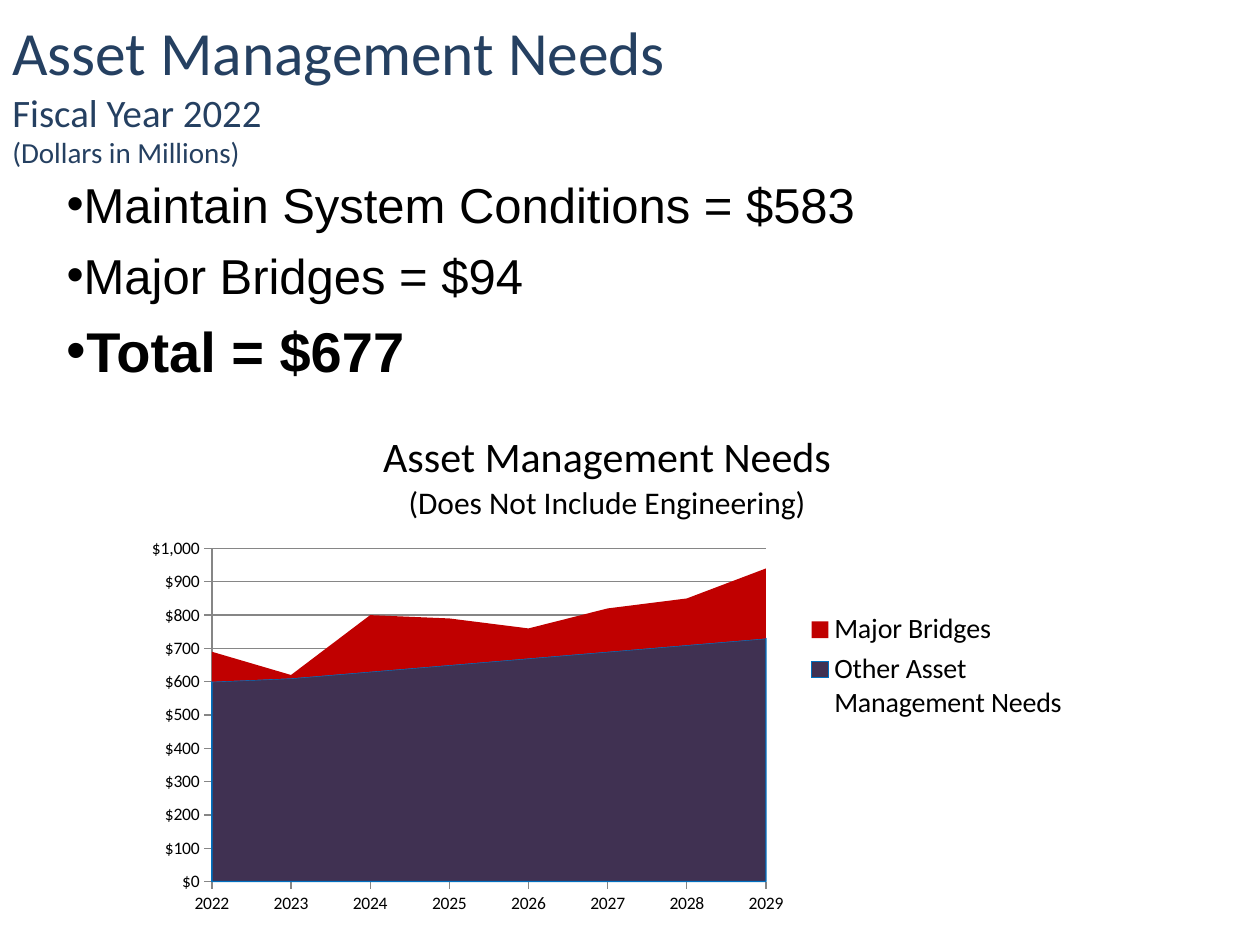
from pptx import Presentation
from pptx.chart.data import CategoryChartData as Data
from pptx.dml.color import RGBColor
from pptx.enum.chart import XL_CHART_TYPE as Kind, XL_LEGEND_POSITION as Side, XL_TICK_MARK as Tick
from pptx.enum.text import MSO_ANCHOR as Anchor
from pptx.oxml.ns import qn
from pptx.util import Pt
from lxml.etree import SubElement as Sub

BLACK = RGBColor(0, 0, 0)
NAVY = RGBColor(0x25, 0x40, 0x61)
PLUM = RGBColor(0x40, 0x31, 0x52)
BLUE = RGBColor(0, 0x70, 0xC0)
RED = RGBColor(0xC0, 0, 0)
GRAY = RGBColor(0x86, 0x86, 0x86)


class Deck:
    """Holds the style and the current slide, and adds elements to it."""
    head, body = "Calibri", "Arial"

    def __init__(self, wide, high):
        self.file = Presentation()
        self.file.slide_width, self.file.slide_height = Pt(wide), Pt(high)
        self.slide = self.file.slides.add_slide(self.file.slide_layouts[6])

    def style(self, font, size, name=head, color=BLACK, bold=False):
        font.size, font.name, font.bold = Pt(size), name, bold
        font.color.rgb = color

    def fill(self, frame, lines, name, color):
        for i, (text, size, bold) in enumerate(lines):
            para = frame.add_paragraph() if i else frame.paragraphs[0]
            para.text = text
            self.style(para.font, size, name, color, bold)

    def frame(self, box):
        frame = self.slide.shapes.add_textbox(*map(Pt, box)).text_frame
        frame.word_wrap = True
        return frame

    def title(self, box, lines):
        frame = self.frame(box)
        frame.vertical_anchor = Anchor.BOTTOM
        frame.margin_bottom = Pt(23)
        self.fill(frame, lines, self.head, NAVY)

    def bullets(self, box, lines):
        frame = self.frame(box)
        self.fill(frame, lines, self.body, BLACK)
        for para in frame.paragraphs:
            para.space_before, para.space_after = Pt(1), Pt(6)
            prop = para._p.get_or_add_pPr()
            prop.set("marL", str(Pt(9.4)))
            prop.set("indent", str(-Pt(9.4)))
            Sub(prop, qn("a:buFont")).set("typeface", self.body)
            Sub(prop, qn("a:buChar")).set("char", "•")

    def area(self, box, title, cats, series):
        data = Data(number_format='"$"#,##0')
        data.categories = cats
        for name, vals, *_ in series:
            data.add_series(name, vals)
        chart = self.slide.shapes.add_chart(Kind.AREA_STACKED, *map(Pt, box), data).chart
        self.style(chart.font, 10)
        self.fill(chart.chart_title.text_frame, title, self.head, BLACK)
        chart.has_legend = True
        chart.legend.position = Side.RIGHT
        chart.legend.include_in_layout = False
        self.style(chart.legend.font, 16)
        for plot, (_, _, color, line) in zip(chart.plots[0].series, series):
            plot.format.fill.solid()
            plot.format.fill.fore_color.rgb = color
            if line:
                plot.format.line.color.rgb = line
                plot.format.line.width = Pt(0.75)
        axis = chart.value_axis
        axis.minimum_scale, axis.maximum_scale, axis.major_unit = 0, 1000, 100
        axis.tick_labels.number_format = '"$"#,##0'
        axis.tick_labels.number_format_is_linked = False
        axis.has_major_gridlines = True
        axis.major_gridlines.format.line.color.rgb = GRAY
        for each in (axis, chart.category_axis):
            each.major_tick_mark, each.minor_tick_mark = Tick.OUTSIDE, Tick.NONE
            each.format.line.color.rgb = GRAY
        chart.category_axis.has_major_gridlines = False


def main():
    deck = Deck(720, 540)
    deck.bullets((31, 96, 569, 126), [
        ("Maintain System Conditions = $583", 28, False),
        ("Major Bridges = $94", 28, False),
        ("Total = $677", 32, True)])
    deck.area((76, 234, 542, 294),
              [("Asset Management Needs", 24, False),
               ("(Does Not Include Engineering)", 18, False)],
              [str(year) for year in range(2022, 2030)],
              [("Other Asset Management Needs",
                (600, 610, 630, 650, 670, 690, 710, 730), PLUM, BLUE),
               ("Major Bridges", (90, 10, 170, 140, 90, 130, 140, 210), RED, None)])
    deck.title((0, 24, 570, 96), [
        ("Asset Management Needs", 35.1, False),
        ("Fiscal Year 2022", 22.2, False),
        ("(Dollars in Millions)", 16.6, False)])
    deck.file.save("out.pptx")


if __name__ == "__main__":
    main()
